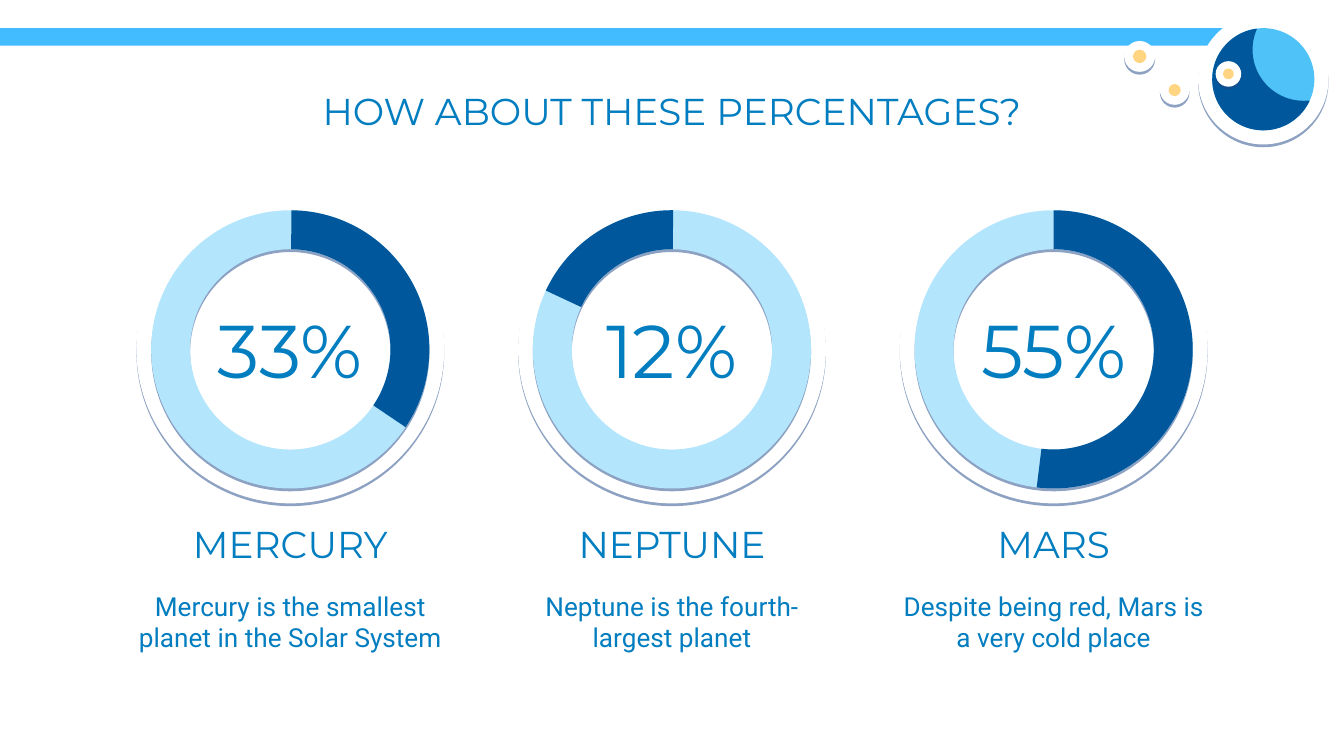
from math import cos, radians, sin

from lxml.etree import SubElement
from pptx import Presentation
from pptx.dml.color import RGBColor
from pptx.enum.shapes import MSO_SHAPE
from pptx.enum.text import MSO_ANCHOR, PP_ALIGN
from pptx.oxml.ns import qn
from pptx.util import Inches, Pt

WHITE, NAVY, SKY, PALE = "FFFFFF", "01579B", "4FC3F7", "B3E5FC"
BAR, GOLD, INK, SHADE = "42BCFE", "FFD581", "017DC0", "1C4587"

TITLE = "HOW ABOUT THESE PERCENTAGES?"
# Name, share, note, start and end of the dark arc (degrees clockwise from the top)
PLANETS = [
    ("MERCURY", "33%", "Mercury is the smallest planet in the Solar System", 0.5, 124),
    ("NEPTUNE", "12%", "Neptune is the fourth-largest planet", -65, 0.5),
    ("MARS", "55%", "Despite being red, Mars is a very cold place", 0, 187),
]
FIRST, STEP, MID = 2.16, 2.84, 2.6  # first ring centre, gap between rings, ring height
GLOBE = (9.4, 0.59)
# Centre x, centre y, size of the white disc, size of the gold core
MOONS = [
    (8.74, 0.67, 0.22, 0.09),
    (8.48, 0.42, 0.23, 0.1),
    (9.14, 0.55, 0.19, 0.08),
]

deck = Presentation()
deck.slide_width = Inches(10)
deck.slide_height = deck.slide_width * 9 // 16
slide = deck.slides.add_slide(deck.slide_layouts[6])


def color(code):
    return RGBColor.from_string(code)


def paint(shape, fill, shade=False):
    """Fill a shape, drop its line and, if asked, add a thin shadow below it."""
    shape.fill.solid()
    shape.fill.fore_color.rgb = color(fill)
    shape.line.fill.background()
    shape.shadow.inherit = False
    if shade:
        effects = shape._element.spPr.find(qn("a:effectLst"))
        outer = SubElement(effects, qn("a:outerShdw"), blurRad="0",
                           dist=str(Pt(1.5)), dir="5400000", algn="bl", rotWithShape="0")
        tint = SubElement(outer, qn("a:srgbClr"), val=SHADE)
        SubElement(tint, qn("a:alpha"), val="50000")


def disc(x, y, size, fill, shade=False, kind=MSO_SHAPE.OVAL, adjust=()):
    """Draw a round shape centred on x, y."""
    shape = slide.shapes.add_shape(kind, Inches(x - size / 2), Inches(y - size / 2),
                                   Inches(size), Inches(size))
    for i, value in enumerate(adjust):
        shape.adjustments[i] = value
    paint(shape, fill, shade)


def write(text, x, y, wide, high, size, font="Montserrat"):
    """Write centred text in a box centred on x with its top at y."""
    box = slide.shapes.add_textbox(Inches(x - wide / 2), Inches(y), Inches(wide), Inches(high))
    frame = box.text_frame
    frame.word_wrap = True
    frame.vertical_anchor = MSO_ANCHOR.MIDDLE
    frame.margin_left = frame.margin_right = Inches(0.1)
    frame.margin_top = frame.margin_bottom = Inches(0.1)
    line = frame.paragraphs[0]
    line.text = text
    line.alignment = PP_ALIGN.CENTER
    line.font.size = Pt(size)
    line.font.name = font
    line.font.color.rgb = color(INK)


def curve(x, y, r, start, end, step):
    """List points on a circle, angles clockwise from the right."""
    return [(Inches(x + r * cos(radians(a))), Inches(y + r * sin(radians(a))))
            for a in range(start, end, step)]


def turn(angle):
    """Change degrees from the top into a block arc adjustment."""
    return (angle - 90) % 360 * 0.6


slide.background.fill.solid()
slide.background.fill.fore_color.rgb = color(WHITE)
bar = slide.shapes.add_shape(MSO_SHAPE.RECTANGLE, 0, Inches(0.21), Inches(9.49), Inches(0.13))
paint(bar, BAR)

disc(*GLOBE, 0.97, WHITE, shade=True)
disc(*GLOBE, 0.76, SKY)
points = curve(*GLOBE, 0.38, 262, 24, -3) + curve(9.7, 0.37, 0.38, 84, 206, 3)
outline = slide.shapes.build_freeform(*points[0])
outline.add_line_segments(points[1:], close=True)
paint(outline.convert_to_shape(), NAVY)

for x, y, size, core in MOONS:
    disc(x, y, size, WHITE, shade=True)
    disc(x, y, core, GOLD)

write(TITLE, 5, 0.59, 7.11, 0.47, 20)
for i, (name, share, note, start, end) in enumerate(PLANETS):
    x = FIRST + i * STEP
    disc(x, MID, 2.29, WHITE, True, MSO_SHAPE.DONUT, [0.14])
    disc(x, MID, 2.07, PALE, True, MSO_SHAPE.DONUT, [0.14])
    disc(x, MID, 2.07, NAVY, False, MSO_SHAPE.BLOCK_ARC, [turn(start), turn(end), 0.14])
    write(share, x, 2.14, 2.07, 0.91, 40)
    write(name, x, 3.78, 2.52, 0.53, 20)
    write(note, x, 4.22, 2.58, 0.81, 14, "Roboto")

deck.save("out.pptx")
